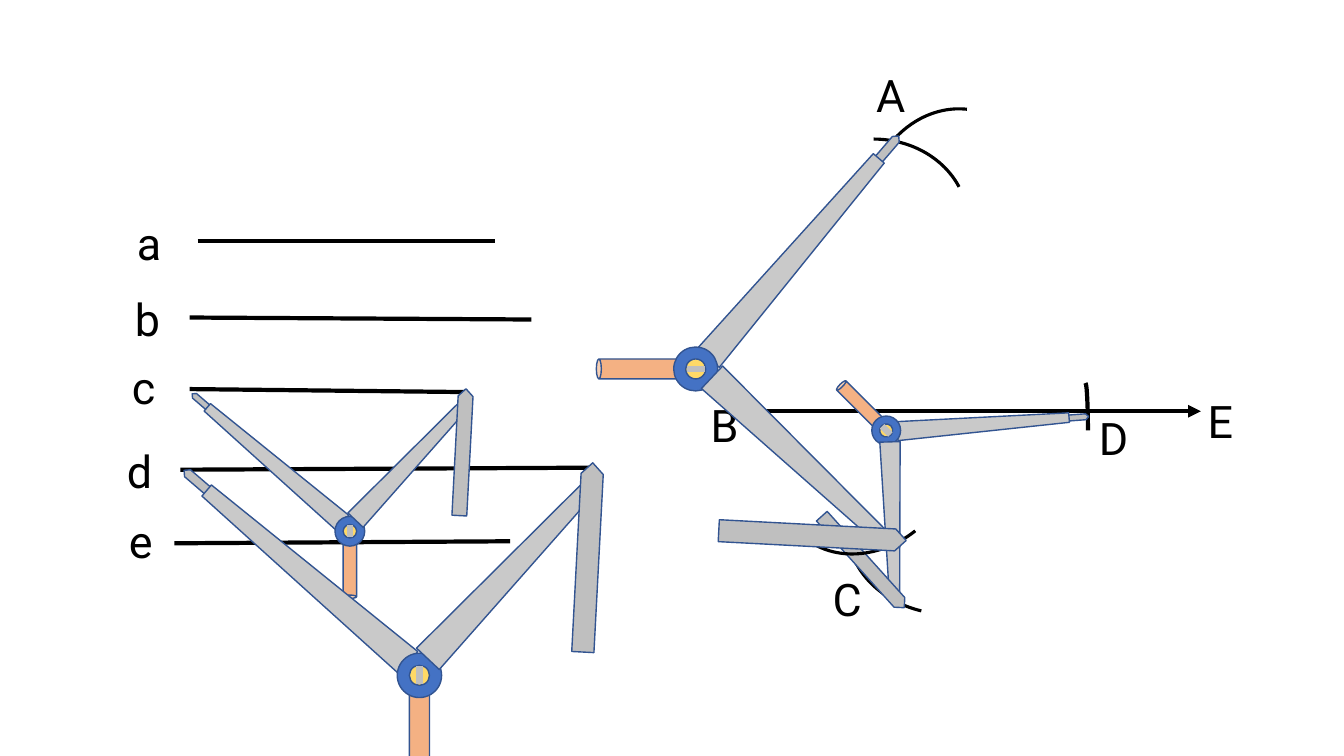
from math import cos, radians, sin

from lxml import etree
from pptx import Presentation
from pptx.dml.color import RGBColor
from pptx.enum.shapes import MSO_CONNECTOR, MSO_SHAPE as Shape
from pptx.oxml.ns import qn
from pptx.util import Pt

PX = 9144  # one hundredth of an inch
BLACK = RGBColor(0x00, 0x00, 0x00)
OUTLINE = RGBColor(0x32, 0x54, 0x91)
STEEL = RGBColor(0xBF, 0xBF, 0xBF)
ARM = RGBColor(0xC9, 0xC9, 0xC9)
HANDLE = RGBColor(0xF4, 0xB1, 0x83)
HINGE = RGBColor(0x44, 0x72, 0xC4)
SCREW = RGBColor(0xFF, 0xD9, 0x66)

# Compass parts: preset, centre from the hinge, width, height, rotation, fill
PARTS = [
    (Shape.PENTAGON, -205, -179, 75, 9, 220.7, STEEL),
    (Shape.TRAPEZOID, -111, -98, 29, 263, 310.5, ARM),
    (Shape.CAN, 0, 57, 20, 85, 180, HANDLE),
    (Shape.OVAL, 0, 0, 44, 44, 180, HINGE),
    (Shape.TRAPEZOID, 90, -103, 31, 238, 43.3, ARM),
    (Shape.PENTAGON, 167, -117, 188, 22, 273, STEEL),
    (Shape.OVAL, 0, 0, 20, 20, 180, SCREW),
]

# Drawn in this order, so that later items cover earlier ones
DRAWING = [
    ("arc", 840, 458, 182, 150, 193.3, 208.81, 2.25),
    ("arc", 773, 138, 187, 164, 0, 202.7, 2.25),
    ("line", 196, 239, 491, 239),
    ("line", 188, 315, 527, 317),
    ("line", 188, 386, 464, 389),
    ("label", "a", 126, 209),
    ("label", "b", 124, 284),
    ("label", "c", 121, 352),
    ("line", 179, 466, 585, 464),
    ("line", 173, 539, 506, 537),
    ("label", "d", 116, 435),
    ("label", "e", 118, 505),
    ("compass", 347, 527, 0.67, 0),
    ("arc", 1074, 380, 5, 94, 0, 0, 3),
    ("arrow", 743, 408, 1191, 408),
    ("label", "B", 695, 390),
    ("label", "E", 1188, 386),
    ("label", "D", 1080, 403),
    ("arc", 850, 118, 187, 164, 291.6, 208.81, 2.25),
    ("compass", 416, 670, 1, 0),
    ("compass", 879, 427, 0.65, 135),
    ("arc", 770, 393, 182, 150, 141.4, 208.81, 2.25),
    ("compass", 690, 366, 0.99, 90),
    ("label", "A", 859, 62),
    ("label", "C", 816, 562),
]


def add_line(shapes, ends, color, width):
    line = shapes.add_connector(MSO_CONNECTOR.STRAIGHT, *(round(v * PX) for v in ends))
    line.line.color.rgb = color
    line.line.width = Pt(width)
    etree.SubElement(line._element.spPr, qn("a:effectLst"))
    return line


def add_part(shapes, preset, bounds, rotation, color, width):
    part = shapes.add_shape(preset, *(round(v * PX) for v in bounds))
    part.rotation = rotation
    part.shadow.inherit = False
    part.line.color.rgb = color
    part.line.width = Pt(width)
    return part


deck = Presentation()
deck.slide_width, deck.slide_height = 1333 * PX, 750 * PX
page = deck.slides.add_slide(deck.slide_layouts[6])

for kind, *values in DRAWING:
    if kind == "arc":
        *bounds, rotation, end, width = values
        arc = add_part(page.shapes, Shape.ARC, bounds, rotation, BLACK, width)
        arc.fill.background()
        arc.adjustments[0], arc.adjustments[1] = 162, end
    elif kind in ("line", "arrow"):
        line = add_line(page.shapes, values, BLACK, 3)
        if kind == "arrow":
            etree.SubElement(line.line._get_or_add_ln(), qn("a:tailEnd"), type="triangle")
    elif kind == "label":
        text, left, top = values
        box = page.shapes.add_textbox(left * PX, top * PX, 41 * PX, 64 * PX)
        box.text_frame.word_wrap = True
        para = box.text_frame.paragraphs[0]
        para.text = text
        para.font.name, para.font.size = "Roboto", Pt(32)
        para.font.color.rgb = BLACK
    else:
        hinge_x, hinge_y, scale, turn = values
        across, along = scale * cos(radians(turn)), scale * sin(radians(turn))
        compass = page.shapes.add_group_shape().shapes
        for preset, dx, dy, width, height, rotation, fill in PARTS:
            width, height = width * scale, height * scale
            left = hinge_x + dx * across - dy * along - width / 2
            top = hinge_y + dx * along + dy * across - height / 2
            part = add_part(compass, preset, (left, top, width, height),
                            (rotation + turn) % 360, OUTLINE, 1)
            part.fill.solid()
            part.fill.fore_color.rgb = fill
        slot = (hinge_x - 9 * along, hinge_y + 9 * across,
                hinge_x + 9 * along, hinge_y - 9 * across)
        add_line(compass, slot, STEEL, 4.5)

deck.save("out.pptx")
